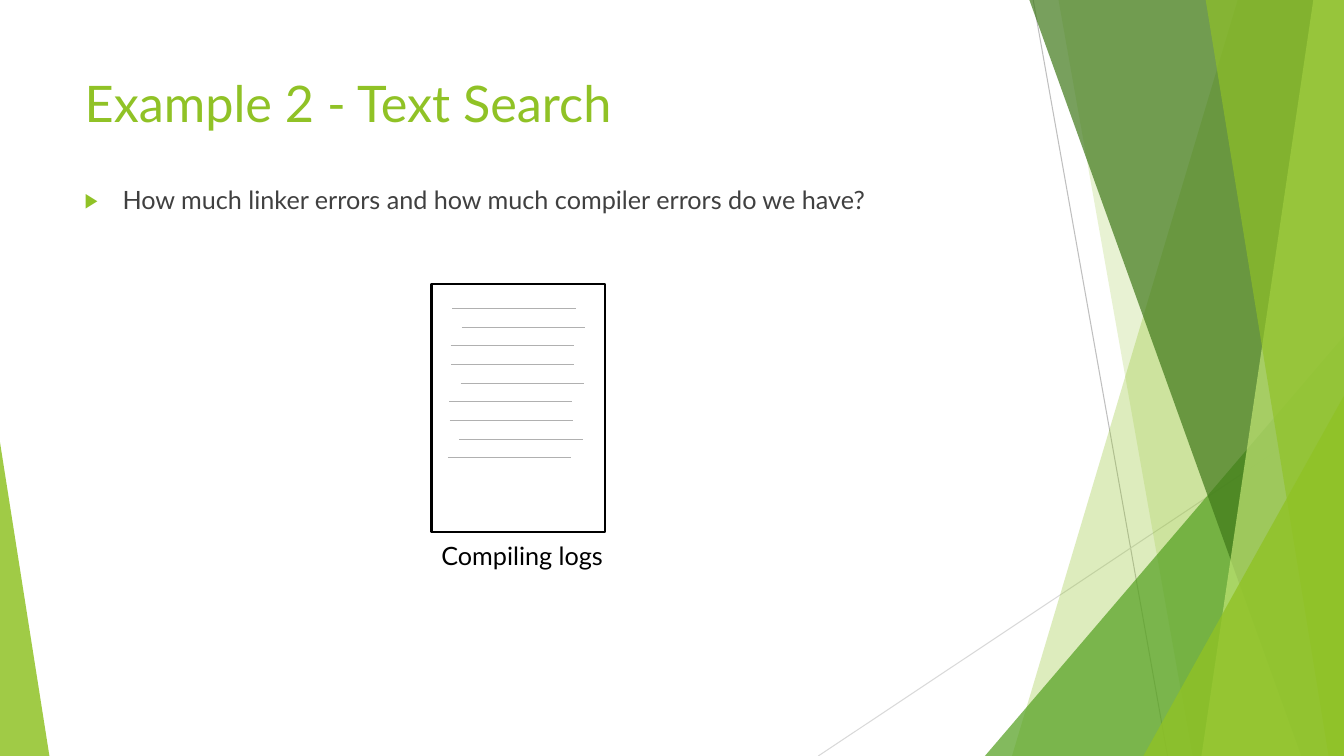
from dataclasses import dataclass

from lxml.etree import SubElement
from pptx import Presentation
from pptx.dml.color import RGBColor
from pptx.enum.shapes import MSO_CONNECTOR, MSO_SHAPE
from pptx.enum.text import MSO_ANCHOR, MSO_AUTO_SIZE, PP_ALIGN
from pptx.oxml.ns import qn
from pptx.util import Pt

FONT = "Lato"
WIDTH, HEIGHT, TOP = 960, 540, -0.6
GREEN = RGBColor(0x90, 0xC2, 0x26)
MEDIUM_GREEN = RGBColor(0x54, 0xA0, 0x21)
DARK_GREEN = RGBColor(0x3F, 0x78, 0x19)
PALE_GREEN = RGBColor(0xC0, 0xE4, 0x74)
BODY_GREY = RGBColor(0x40, 0x40, 0x40)
LOG_GREY = RGBColor(0xB0, 0xB0, 0xB0)
MID_GREY = RGBColor(0xBF, 0xBF, 0xBF)
LIGHT_GREY = RGBColor(0xD9, 0xD9, 0xD9)
BLACK = RGBColor(0, 0, 0)


@dataclass(frozen=True)
class Band:
    top_left: float
    bottom_left: float
    color: RGBColor
    opacity: int


@dataclass(frozen=True)
class Triangle:
    left: float
    top: float
    width: float
    apex: float
    color: RGBColor
    opacity: int


@dataclass(frozen=True)
class Line:
    start: tuple[float, float]
    end: tuple[float, float]
    color: RGBColor
    weight: float


@dataclass(frozen=True)
class LogRow:
    left: float
    top: float


DECORATION_LINES = [
    Line((738, 0), (834, HEIGHT), MID_GREY, 0.75),
    Line((WIDTH, 290), (584.5, HEIGHT), LIGHT_GREY, 0.75),
]
DECORATIONS = [
    Band(884.3, 722.9, GREEN, 30),
    Band(756, 851.8, GREEN, 20),
    Triangle(703.5, 240, 256.5, 1, MEDIUM_GREEN, 72),
    Band(735.1, 929.5, DARK_GREEN, 70),
    Band(938.2, 858.2, PALE_GREEN, 70),
    Band(861.1, 949, GREEN, 65),
    Triangle(816.7, 282.7, 143.3, 1, GREEN, 80),
    Triangle(0, 316, 35.3, 0, GREEN, 85),
]
LOG_ROWS = [LogRow(323.2, 220.2), LogRow(329.9, 234), LogRow(321.8, 247)]
LOG_GROUPS, LOG_PITCH, LOG_SHIFT, LOG_LENGTH = 3, 40, -0.9, 88


def fill_shape(shape, color: RGBColor, opacity: int) -> None:
    shape.shadow.inherit = False
    shape.fill.solid()
    shape.fill.fore_color.rgb = color
    shape.line.fill.background()
    color_element = next(shape.element.spPr.iter(qn("a:srgbClr")))
    SubElement(color_element, qn("a:alpha"), val=str(opacity * 1000))


def draw_band(slide, band: Band) -> None:
    builder = slide.shapes.build_freeform(Pt(band.top_left), Pt(TOP), scale=1.0)
    corners = [(WIDTH, TOP), (WIDTH, HEIGHT), (band.bottom_left, HEIGHT)]
    builder.add_line_segments([(Pt(x), Pt(y)) for x, y in corners], close=True)
    fill_shape(builder.convert_to_shape(), band.color, band.opacity)


def draw_triangle(slide, triangle: Triangle) -> None:
    shape = slide.shapes.add_shape(
        MSO_SHAPE.ISOSCELES_TRIANGLE, Pt(triangle.left), Pt(triangle.top),
        Pt(triangle.width), Pt(HEIGHT - triangle.top))
    shape.adjustments[0] = triangle.apex
    fill_shape(shape, triangle.color, triangle.opacity)


def draw_line(slide, line: Line) -> None:
    connector = slide.shapes.add_connector(
        MSO_CONNECTOR.STRAIGHT, *(Pt(value) for value in line.start + line.end))
    connector.line.color.rgb = line.color
    connector.line.width = Pt(line.weight)
    SubElement(connector.element.spPr, qn("a:effectLst"))


def write_text(shape, text: str, *, size: float, color: RGBColor,
               wrap: bool = True, auto_size: MSO_AUTO_SIZE = MSO_AUTO_SIZE.NONE,
               space_before: float = 0):
    frame = shape.text_frame
    frame.word_wrap = wrap
    frame.auto_size = auto_size
    frame.vertical_anchor = MSO_ANCHOR.TOP
    paragraph = frame.paragraphs[0]
    paragraph.alignment = PP_ALIGN.LEFT
    paragraph.space_before = Pt(space_before)
    run = paragraph.add_run()
    run.text = text
    run.font.name = FONT
    run.font.size = Pt(size)
    run.font.color.rgb = color
    return paragraph


def add_bullet(paragraph, character: str, color: RGBColor, percent: int, indent: float) -> None:
    properties = paragraph._p.get_or_add_pPr()
    properties.set("marL", str(Pt(indent)))
    properties.set("indent", str(-Pt(indent)))
    bullet_color = SubElement(properties, qn("a:buClr"))
    SubElement(bullet_color, qn("a:srgbClr"), val=str(color))
    SubElement(properties, qn("a:buSzPct"), val=str(percent * 1000))
    SubElement(properties, qn("a:buFont"), typeface=FONT)
    SubElement(properties, qn("a:buChar"), char=character)


def place(shape, left: float, top: float, width: float, height: float) -> None:
    shape.left, shape.top = Pt(left), Pt(top)
    shape.width, shape.height = Pt(width), Pt(height)


def draw_decorations(slide) -> None:
    for line in DECORATION_LINES:
        draw_line(slide, line)
    for decoration in DECORATIONS:
        if isinstance(decoration, Band):
            draw_band(slide, decoration)
        else:
            draw_triangle(slide, decoration)


def draw_log_page(slide) -> None:
    caption = slide.shapes.add_textbox(Pt(308.2), Pt(382.3), Pt(131.8), Pt(29))
    write_text(caption, "Compiling logs", size=18, color=BLACK, wrap=False,
               auto_size=MSO_AUTO_SIZE.SHAPE_TO_FIT_TEXT)
    page = slide.shapes.add_shape(
        MSO_SHAPE.RECTANGLE, Pt(308.2), Pt(203), Pt(124), Pt(177))
    page.shadow.inherit = False
    page.fill.background()
    page.line.color.rgb = BLACK
    page.line.width = Pt(1.5)
    for group in range(LOG_GROUPS):
        for row in LOG_ROWS:
            left = row.left + group * LOG_SHIFT
            top = row.top + group * LOG_PITCH
            draw_line(slide, Line((left, top), (left + LOG_LENGTH, top), LOG_GREY, 1))


def main() -> None:
    presentation = Presentation()
    presentation.slide_width, presentation.slide_height = Pt(WIDTH), Pt(HEIGHT)
    slide = presentation.slides.add_slide(presentation.slide_layouts[1])
    title, body = slide.placeholders
    draw_decorations(slide)
    for placeholder in (title, body):
        slide.shapes.element.append(placeholder.element)
    place(title, 53.3, 48, 677, 104)
    write_text(title, "Example 2 - Text Search", size=36, color=GREEN)
    place(body, 53.3, 128, 677, 305.5)
    question = write_text(
        body, "How much linker errors and how much compiler errors do we have?",
        size=18, color=BODY_GREY, space_before=10)
    add_bullet(question, "▶", GREEN, 80, 27)
    draw_log_page(slide)
    presentation.save("out.pptx")


if __name__ == "__main__":
    main()
